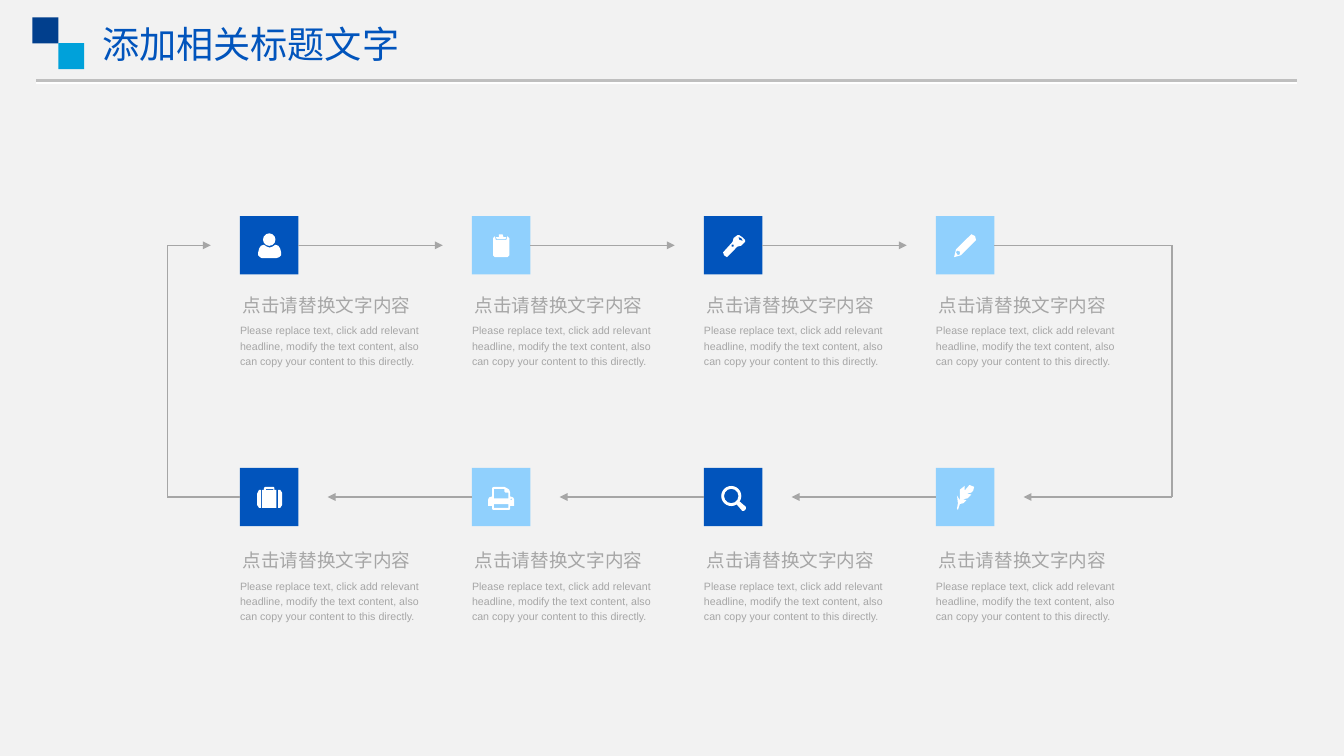
from lxml import etree
from pptx import Presentation
from pptx.dml.color import RGBColor
from pptx.enum.shapes import MSO_CONNECTOR, MSO_SHAPE
from pptx.enum.text import MSO_ANCHOR, PP_ALIGN
from pptx.oxml.ns import qn
from pptx.util import Pt

COLORS = {
    "background": "F2F2F2", "rule": "BFBFBF", "navy": "013F8D", "cyan": "00A1DA",
    "blue": "0154BC", "sky": "90D0FD", "grey": "A6A6A6", "white": "FFFFFF",
}
HEADING = "点击请替换文字内容"
BODY = ("Please replace text, click add relevant headline, modify the text "
        "content, also can copy your content to this directly.")

# Grid of the process loop
COLUMN_LEFT, COLUMN_PITCH, COLUMNS = 180.8, 174.72, 4
ROW_TOPS, TEXT_TOPS = (162.8, 352.4), (218.2, 410.4)
TILE, ARROW_GAP = 44, 22
LANE_LEFT, LANE_RIGHT = 126, 882.7
ICON_UNIT = 0.72

# Each icon is a list of outlines on a 61 x 61 grid; later contours are holes
PERSON = [[[(25, 30), (22, 31), (20, 34), (19, 38), (19, 41), (21, 43), (23, 44),
            (38, 44), (41, 43), (43, 41), (43, 38), (42, 34), (40, 31), (37, 30),
            (34, 32), (31, 33), (28, 32)]]]
CLIPBOARD = [
    [[(37, 21), (36, 25), (25, 25), (24, 21), (22, 23), (22, 41), (24, 43),
      (37, 43), (39, 41), (39, 23)]],
    [[(35, 24), (36, 22), (33, 22), (32, 19), (28, 19), (28, 22), (25, 22), (26, 24)]],
]
FLASHLIGHT = [[
    [(40, 22), (37, 20), (35, 20), (31, 23), (30, 27), (20, 38), (21, 41), (24, 43),
     (35, 32), (39, 31), (43, 27), (43, 25)],
    [(37, 25), (36, 22), (39, 23), (41, 26)],
    [(29, 32), (29, 30), (31, 30), (31, 32)],
]]
PENCIL = [[
    [(41, 21), (37, 19), (21, 35), (19, 43), (26, 41), (42, 25)],
    [(25, 40), (23, 41), (21, 38), (22, 36), (25, 37)],
]]
SUITCASE = [
    [[(18, 27), (20, 23), (22, 23), (22, 42), (20, 42), (18, 39)]],
    [[(23, 23), (25, 23), (25, 21), (26, 20), (35, 20), (36, 21), (36, 23),
      (38, 23), (38, 42), (23, 42)],
     [(35, 23), (27, 23), (27, 22), (35, 22)]],
    [[(40, 23), (42, 23), (44, 26), (44, 39), (42, 42), (40, 42)]],
]
PRINTER = [[
    [(43, 31), (40, 30), (40, 26), (39, 23), (36, 21), (34, 20), (23, 20), (21, 21),
     (21, 30), (18, 31), (17, 33), (17, 40), (21, 40), (21, 43), (22, 44), (39, 44),
     (40, 43), (40, 40), (44, 40), (44, 33)],
    [(38, 32), (23, 32), (23, 22), (34, 22), (34, 25), (35, 26), (38, 26)],
    [(38, 42), (23, 42), (23, 38), (38, 38)],
    [(40, 33), (41, 32), (42, 33), (41, 34)],
]]
MAGNIFIER = [[[(44, 41), (37, 35), (34, 38), (40, 45), (42, 45), (44, 43)]]]
FEATHER = [[[(23, 44), (25, 38), (29, 37), (32, 34), (28, 33), (33, 32), (37, 28),
             (32, 27), (37, 26), (39, 24), (40, 20), (35, 18), (30, 24), (30, 19),
             (25, 23), (25, 34), (22, 29), (23, 37), (22, 43)]]]
ICONS = [[PERSON, CLIPBOARD, FLASHLIGHT, PENCIL],
         [SUITCASE, PRINTER, MAGNIFIER, FEATHER]]

presentation = Presentation()
presentation.slide_width, presentation.slide_height = Pt(1012.32), Pt(569.52)
slide = presentation.slides.add_slide(presentation.slide_layouts[5])
slide.background.fill.solid()
slide.background.fill.fore_color.rgb = RGBColor.from_string(COLORS["background"])


def paint(shape, color):
    shape.shadow.inherit = False
    shape.fill.solid()
    shape.fill.fore_color.rgb = RGBColor.from_string(COLORS[color])
    shape.line.fill.background()


def add_line(start, end, color="grey", width=1, arrow=False):
    connector = slide.shapes.add_connector(
        MSO_CONNECTOR.STRAIGHT, *(Pt(value) for value in start + end))
    connector.line.color.rgb = RGBColor.from_string(COLORS[color])
    connector.line.width = Pt(width)
    if arrow:
        etree.SubElement(connector.line._get_or_add_ln(), qn("a:tailEnd"), type="triangle")
    etree.SubElement(connector._element.spPr, qn("a:effectLst"))
    return connector


# Header: rule with a white shadow, two squares and the title
rule = add_line((27.4, 60.5), (977, 60.5), "rule", 2.25)
shadow = etree.SubElement(rule._element.spPr.find(qn("a:effectLst")), qn("a:outerShdw"),
                          dist=str(Pt(2)), dir="5400000", algn="t", rotWithShape="0")
etree.SubElement(shadow, qn("a:srgbClr"), val=COLORS["white"])
for left, top, color in ((24.5, 13.2, "navy"), (44, 32.6, "cyan")):
    square = slide.shapes.add_shape(MSO_SHAPE.RECTANGLE, Pt(left), Pt(top), Pt(19.5), Pt(19.5))
    paint(square, color)

title = slide.shapes.title
title.left, title.top, title.width, title.height = Pt(69.8), Pt(12.2), Pt(260.6), Pt(41)
title.text_frame.vertical_anchor = MSO_ANCHOR.TOP
paragraph = title.text_frame.paragraphs[0]
paragraph.alignment = PP_ALIGN.LEFT
run = paragraph.add_run()
run.text = "添加相关标题文字"
run.font.size = Pt(28)
run.font.name = "Noto Sans CJK SC"
run.font.color.rgb = RGBColor.from_string(COLORS["blue"])
etree.SubElement(run.font._element, qn("a:ea"), typeface="Noto Sans CJK SC")

# Steps: tile, icon, arrow and texts
for row, icons in enumerate(ICONS):
    top = ROW_TOPS[row]
    middle = top + TILE / 2
    for column, icon in enumerate(icons):
        left = COLUMN_LEFT + column * COLUMN_PITCH
        tile = slide.shapes.add_shape(MSO_SHAPE.RECTANGLE, Pt(left), Pt(top), Pt(TILE), Pt(TILE))
        paint(tile, "sky" if column % 2 else "blue")

        for contours in icon:
            builder = slide.shapes.build_freeform(*contours[0][0], scale=Pt(ICON_UNIT))
            builder.add_line_segments(contours[0][1:])
            for hole in contours[1:]:
                builder.move_to(*hole[0])
                builder.add_line_segments(hole[1:])
            paint(builder.convert_to_shape(Pt(left), Pt(top)), "white")
        if icon is PERSON:
            head = slide.shapes.add_shape(MSO_SHAPE.OVAL, Pt(left + 17.3), Pt(top + 13),
                                          Pt(9.4), Pt(9.4))
            paint(head, "white")
        if icon is MAGNIFIER:
            lens = slide.shapes.add_shape(MSO_SHAPE.DONUT, Pt(left + 13), Pt(top + 13.7),
                                          Pt(15.1), Pt(15.1))
            lens.adjustments[0] = 0.14
            paint(lens, "white")

        # The top row runs right, the bottom row runs left
        if row == 0:
            last, side, start = column == COLUMNS - 1, 3, left + TILE
            end = LANE_RIGHT if last else left + COLUMN_PITCH - ARROW_GAP
        else:
            last, side, start = column == 0, 1, left
            end = LANE_LEFT if last else left - COLUMN_PITCH + TILE + ARROW_GAP
        connector = add_line((start, middle), (end, middle), arrow=not last)
        connector.begin_connect(tile, side)

        text_top = TEXT_TOPS[row]
        for text, size, x, y, width, height in (
            (HEADING, 14, left + 2, text_top, 170, 19),
            (BODY, 8, left, text_top + 24.2, 145.4, 34),
        ):
            box = slide.shapes.add_textbox(Pt(x), Pt(y), Pt(width), Pt(height))
            frame = box.text_frame
            frame.word_wrap = True
            frame.margin_left = frame.margin_top = frame.margin_right = frame.margin_bottom = 0
            paragraph = frame.paragraphs[0]
            paragraph.line_spacing = 1.2
            run = paragraph.add_run()
            run.text = text
            run.font.size = Pt(size)
            run.font.name = "Arial"
            run.font.color.rgb = RGBColor.from_string(COLORS["grey"])

# Lanes that close the loop on both sides
upper, lower = (top + TILE / 2 for top in ROW_TOPS)
last_right = COLUMN_LEFT + (COLUMNS - 1) * COLUMN_PITCH + TILE
add_line((LANE_RIGHT, upper), (LANE_RIGHT, lower))
add_line((LANE_RIGHT, lower), (last_right + ARROW_GAP, lower), arrow=True)
add_line((LANE_LEFT, lower), (LANE_LEFT, upper))
add_line((LANE_LEFT, upper), (COLUMN_LEFT - ARROW_GAP, upper), arrow=True)

presentation.save("out.pptx")
